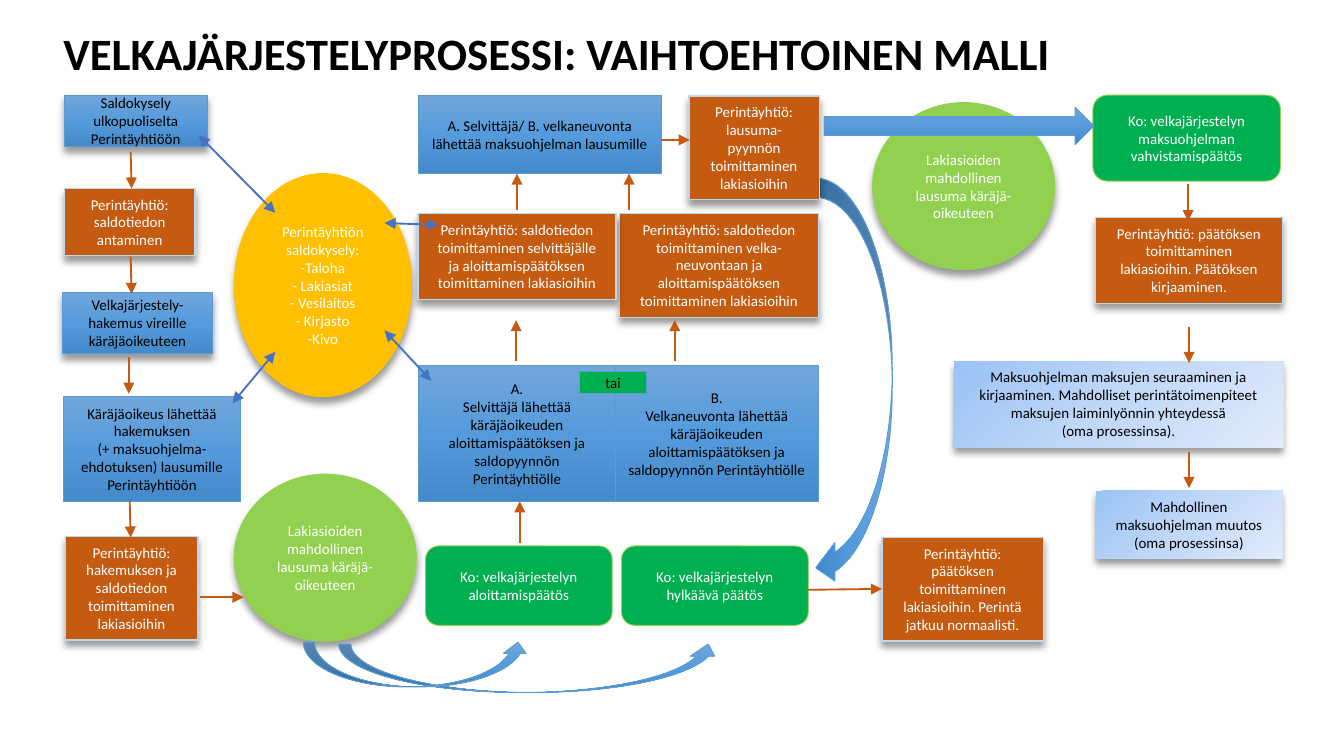
from lxml import etree
from pptx import Presentation
from pptx import util as u
from pptx.dml.color import RGBColor
from pptx.enum import shapes, text
from pptx.oxml import ns

COLOURS = {"black": "000000", "white": "FFFFFF", "rust": "C55A11", "pale": "BDD7EE",
           "blue": "5B9BD5", "link": "4472C4", "yellow": "FFC000", "lime": "92D050",
           "green": "00B050"}
GRADIENTS = {"sky": (90, ["71A6DB", "559BDB", "448ACA"]),
             "mist": (45, ["9AC3F5", "C2D8F8", "E1EBFB"])}
# style: fill, line, line width, text colour, anchor, shadow
STYLES = {
    "step": ("sky", "blue", 0.5, "black", "MIDDLE", False),
    "raised": ("sky", "blue", 0.5, "black", "MIDDLE", True),
    "agency": ("rust", "pale", 0.75, "white", "TOP", True),
    "query": ("yellow", "yellow", 0.5, "white", "MIDDLE", True),
    "legal": ("lime", "lime", 0.5, "white", "MIDDLE", True),
    "court": ("green", "lime", 0.5, "white", "MIDDLE", False),
    "follow": ("mist", None, 0, "black", "TOP", True),
    "or": ("green", "blue", 0.5, "black", "MIDDLE", False),
}


def rgb(name):
    return RGBColor.from_string(COLOURS[name])


def add_xml(parent, tag, **attributes):
    return etree.SubElement(parent, ns.qn(tag), {k: str(v) for k, v in attributes.items()})


presentation = Presentation()
presentation.slide_width, presentation.slide_height = u.Pt(720), u.Pt(405)
slide = presentation.slides.add_slide(presentation.slide_layouts[6])

# Title
title = slide.shapes.add_textbox(u.Pt(34), u.Pt(-41), u.Pt(620), u.Pt(84))
frame_format = {"word_wrap": True, "vertical_anchor": text.MSO_ANCHOR.BOTTOM,
                "margin_left": 0, "margin_top": 0, "margin_bottom": 0}
for name, value in frame_format.items():
    setattr(title.text_frame, name, value)
paragraph = title.text_frame.paragraphs[0]
paragraph.text = "VELKAJÄRJESTELYPROSESSI: VAIHTOEHTOINEN MALLI"
paragraph.line_spacing = 0.9
for name, value in {"name": "Calibri", "size": u.Pt(24), "bold": True}.items():
    setattr(paragraph.font, name, value)
paragraph.font.color.rgb = rgb("black")

# Boxes, ellipses and block arrows, from back to front
LEGAL_TEXT = "Lakiasioiden mahdollinen lausuma käräjä-oikeuteen"
REQUEST_TEXT = "lähettää käräjäoikeuden aloittamispäätöksen ja saldopyynnön Perintäyhtiölle"
NODES = [
    ("RECTANGLE", "raised", 34.5, 51, 76.5, 27.5, "Saldokysely ulkopuoliselta\nPerintäyhtiöön"),
    ("RECTANGLE", "agency", 34.5, 101, 70, 36, "Perintäyhtiö: saldotiedon antaminen"),
    ("RECTANGLE", "step", 34, 212.5, 95, 56,
     "Käräjäoikeus lähettää hakemuksen\n"
     "(+ maksuohjelma-ehdotuksen) lausumille Perintäyhtiöön"),
    ("OVAL", "query", 125.5, 93, 95, 119.5,
     "Perintäyhtiön saldokysely:\n-Taloha\n- Lakiasiat\n- Vesilaitos\n- Kirjasto\n-Kivo"),
    ("RECTANGLE", "agency", 35, 287.5, 71, 55.5,
     "Perintäyhtiö: hakemuksen ja saldotiedon toimittaminen lakiasioihin"),
    ("RECTANGLE", "step", 224, 196, 106, 72.5, "A.\nSelvittäjä " + REQUEST_TEXT),
    ("OVAL", "legal", 125.5, 254, 97.5, 89.5, LEGAL_TEXT),
    ("RECTANGLE", "step", 329.5, 196, 109, 72.5, "B.\nVelkaneuvonta " + REQUEST_TEXT),
    ("CURVED_UP_ARROW", "step", 181.5, 345, 204.5, 26, ""),
    ("CURVED_UP_ARROW", "step", 162.5, 344, 121, 24, ""),
    ("RECTANGLE", "agency", 332, 114.5, 106.5, 55.5,
     "Perintäyhtiö: saldotiedon toimittaminen velka-neuvontaan ja "
     "aloittamispäätöksen toimittaminen lakiasioihin"),
    ("RECTANGLE", "agency", 587, 116.5, 100, 46,
     "Perintäyhtiö: päätöksen toimittaminen lakiasioihin. Päätöksen kirjaaminen."),
    ("RECTANGLE", "step", 224, 51, 130.5, 42,
     "A. Selvittäjä/ B. velkaneuvonta lähettää maksuohjelman lausumille"),
    ("CURVED_DOWN_ARROW", "step", 348, 184.5, 219, 41, ""),
    ("ROUNDED_RECTANGLE", "court", 228, 292.5, 100, 42.5, "Ko: velkajärjestelyn aloittamispäätös"),
    ("ROUNDED_RECTANGLE", "court", 333, 292.5, 100, 42.5, "Ko: velkajärjestelyn hylkäävä päätös"),
    ("RECTANGLE", "agency", 472.5, 288, 86.5, 55.5,
     "Perintäyhtiö: päätöksen toimittaminen lakiasioihin. Perintä jatkuu normaalisti."),
    ("RECTANGLE", "raised", 33.5, 156.5, 80.5, 33,
     "Velkajärjestely-hakemus vireille käräjäoikeuteen"),
    ("RECTANGLE", "agency", 369, 51.5, 70, 55.5,
     "Perintäyhtiö: lausuma-pyynnön toimittaminen lakiasioihin"),
    ("RECTANGLE", "agency", 224, 114.5, 106, 46,
     "Perintäyhtiö: saldotiedon toimittaminen selvittäjälle ja "
     "aloittamispäätöksen toimittaminen lakiasioihin"),
    ("ROUNDED_RECTANGLE", "court", 585.5, 51, 100.5, 46,
     "Ko: velkajärjestelyn maksuohjelman vahvistamispäätös"),
    ("RECTANGLE", "follow", 511, 193.5, 176.5, 46.5,
     "Maksuohjelman maksujen seuraaminen ja kirjaaminen. Mahdolliset "
     "perintätoimenpiteet maksujen laiminlyönnin yhteydessä\n(oma prosessinsa)."),
    ("RECTANGLE", "follow", 587, 263, 100, 36.5,
     "Mahdollinen maksuohjelman muutos (oma prosessinsa)"),
    ("RECTANGLE", "or", 310.5, 199, 36, 12, "tai"),
    ("OVAL", "legal", 467.5, 55, 97.5, 89.5, LEGAL_TEXT),
    ("RIGHT_ARROW", "step", 441.5, 57.5, 144.5, 20, ""),
]
for kind, style, left, top, width, height, words in NODES:
    fill, line, line_width, ink, anchor, shadow = STYLES[style]
    shape = slide.shapes.add_shape(shapes.MSO_SHAPE[kind], u.Pt(left), u.Pt(top),
                                   u.Pt(width), u.Pt(height))
    shape.shadow.inherit = False
    properties = shape._element.spPr
    if kind == "CURVED_DOWN_ARROW":
        shape.rotation = 90
    if line:
        shape.line.color.rgb = rgb(line)
        shape.line.width = u.Pt(line_width)
    else:
        shape.line.fill.background()
    if fill in GRADIENTS:
        angle, stops = GRADIENTS[fill]
        shape.fill.gradient()
        gradient = properties.find(ns.qn("a:gradFill"))
        for child in list(gradient):
            gradient.remove(child)
        stop_list = add_xml(gradient, "a:gsLst")
        for index, stop in enumerate(stops):
            add_xml(add_xml(stop_list, "a:gs", pos=index * 50000), "a:srgbClr", val=stop)
        add_xml(gradient, "a:lin", ang=angle * 60000, scaled=0)
    else:
        shape.fill.solid()
        shape.fill.fore_color.rgb = rgb(fill)
    if shadow:
        outer = add_xml(properties.find(ns.qn("a:effectLst")), "a:outerShdw", blurRad=u.Pt(4),
                        dist=u.Pt(3), dir=90 * 60000, algn="ctr", rotWithShape=0)
        add_xml(add_xml(outer, "a:srgbClr", val=COLOURS["black"]), "a:alpha", val=40000)
    if words:
        frame = shape.text_frame
        frame.word_wrap = True
        frame.vertical_anchor = text.MSO_ANCHOR[anchor]
        frame.text = words
        for paragraph in frame.paragraphs:
            paragraph.alignment = text.PP_ALIGN.CENTER
            for name, value in {"name": "Calibri", "size": u.Pt(8)}.items():
                setattr(paragraph.font, name, value)
            paragraph.font.color.rgb = rgb(ink)

# Thin arrows: rust ones point one way, blue ones both ways
ARROWS = {
    "rust": [(70, 81.5, 70.5, 101), (70, 137.5, 70.5, 157.5), (69, 191.5, 69, 211),
             (69.5, 268.5, 70, 288), (107, 320, 130.5, 320), (354, 75, 369.5, 75),
             (361.5, 193.5, 361.5, 171.5), (276.5, 193.5, 276.5, 171.5),
             (278.5, 291, 278.5, 268.5), (432.5, 316, 472.5, 315.5),
             (337, 112.5, 337, 93), (277, 112.5, 277, 93), (636.5, 98.5, 636.5, 118.5),
             (637, 175, 637, 194.5), (637, 242, 637, 261.5)],
    "link": [(124.5, 216, 147.5, 188.5), (106.5, 72.5, 147.5, 114),
             (231, 204, 206, 177), (206, 119.5, 235, 120.5)],
}
for colour, segments in ARROWS.items():
    for ends in segments:
        arrow = slide.shapes.add_connector(shapes.MSO_CONNECTOR.STRAIGHT, *map(u.Pt, ends))
        arrow.line.color.rgb = rgb(colour)
        arrow.line.width = u.Pt(1)
        outline = arrow.line._get_or_add_ln()
        if colour == "link":
            add_xml(outline, "a:headEnd", type="triangle")
        add_xml(outline, "a:tailEnd", type="triangle")
        add_xml(arrow._element.spPr, "a:effectLst")

presentation.save("out.pptx")
